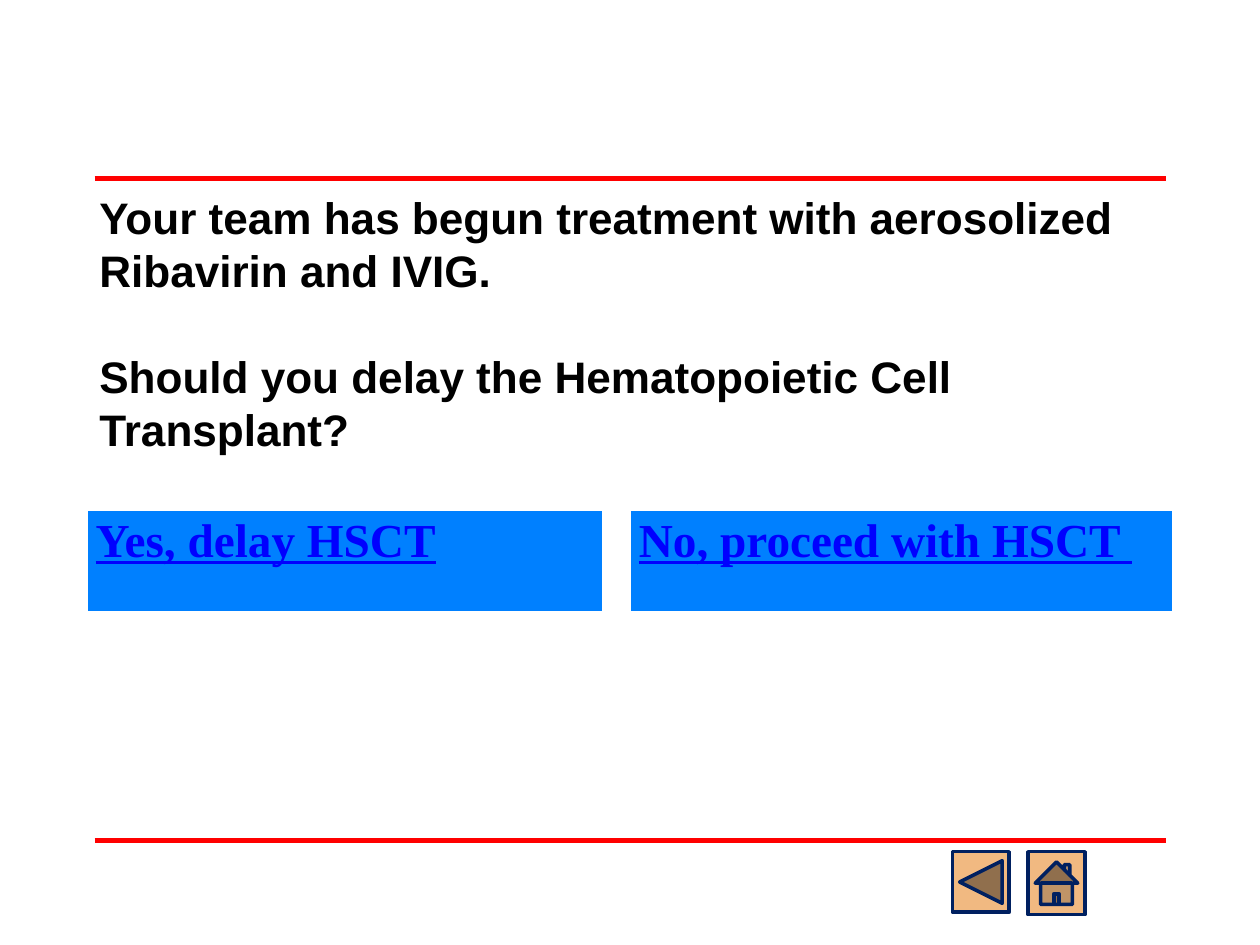
import pptx
import pptx.util
import pptx.dml.color
import pptx.enum.shapes
import pptx.enum.text
import pptx.oxml.ns
from lxml import etree

Pt = pptx.util.Pt
Kind = pptx.enum.shapes.MSO_SHAPE

# Content
lines = ["Your team has begun treatment with aerosolized Ribavirin and IVIG.",
         "Should you delay the Hematopoietic Cell Transplant?"]
picks = [("Yes, delay HSCT", 49.68, 294.5),
         ("No, proceed with HSCT ", 360, 310.3)]
keys = [(Kind.ACTION_BUTTON_FORWARD_OR_NEXT, 544.3, 34.6, 180),
        (Kind.ACTION_BUTTON_HOME, 587.5, 36, 0)]
rules = [102.2, 480.2]

theme = dict(
    ink="000000", rule="FF0000", fill="0080FF", link="0000FF", edge="FFFFFF",
    key="F1B981", rim="002060",
    head="Arial", body="Times New Roman", big=25.2, pick=27, lead=30.3)


def tint(name):
    return pptx.dml.color.RGBColor.from_string(theme[name])


def write(frame, texts, face, size, ink, under=None, lead=None):
    """Fill a text frame, one paragraph for each text."""
    for i, text in enumerate(texts):
        para = frame.add_paragraph() if i else frame.paragraphs[0]
        if lead:
            para.line_spacing = Pt(lead)
            para.space_before = Pt(lead if i else 0)
        run = para.add_run()
        run.text = text
        font = run.font
        font.name, font.size, font.bold = theme[face], Pt(theme[size]), True
        font.underline = under
        font.color.rgb = tint(ink)


def pad(item, side, top):
    item.margin_left = item.margin_right = Pt(side)
    item.margin_top = item.margin_bottom = Pt(top)


def edge(cell):
    """Put white borders on a cell, with a thick one below."""
    props = cell._tc.get_or_add_tcPr()
    for i, (tag, wide) in enumerate([("lnL", 1), ("lnR", 1), ("lnT", 1), ("lnB", 3)]):
        line = etree.Element(pptx.oxml.ns.qn("a:" + tag), w=str(Pt(wide)))
        fill = etree.SubElement(line, pptx.oxml.ns.qn("a:solidFill"))
        etree.SubElement(fill, pptx.oxml.ns.qn("a:srgbClr"), val=theme["edge"])
        props.insert(i, line)


deck = pptx.Presentation()
deck.slide_width, deck.slide_height = Pt(720), Pt(540)
slide = deck.slides.add_slide(deck.slide_layouts[6])
shapes = slide.shapes

# Red rules
for y in rules:
    rule = shapes.add_connector(pptx.enum.shapes.MSO_CONNECTOR.STRAIGHT,
                                Pt(54), Pt(y), Pt(666), Pt(y))
    rule.line.color.rgb = tint("rule")
    rule.line.width = Pt(3)
    etree.SubElement(rule._element.spPr, pptx.oxml.ns.qn("a:effectLst"))

# Question
box = shapes.add_textbox(Pt(49.68), Pt(89.28), Pt(620.64), Pt(234.72))
frame = box.text_frame
frame.word_wrap = True
frame.vertical_anchor = pptx.enum.text.MSO_ANCHOR.TOP
pad(frame, 7.2, 3.6)
frame.margin_top = Pt(19.4)
write(frame, lines, "head", "big", "ink", lead=theme["lead"])

# Answers
for text, x, wide in picks:
    grid = shapes.add_table(1, 1, Pt(x), Pt(291.6), Pt(wide), Pt(59)).table
    cell = grid.cell(0, 0)
    pad(cell, 5.04, 2.88)
    cell.fill.solid()
    cell.fill.fore_color.rgb = tint("fill")
    edge(cell)
    write(cell.text_frame, [text], "body", "pick", "link", under=True)

# Navigation buttons
for kind, x, high, turn in keys:
    key = shapes.add_shape(kind, Pt(x), Pt(486.7), Pt(32.4), Pt(high))
    key.rotation = turn
    key.shadow.inherit = False
    key.fill.solid()
    key.fill.fore_color.rgb = tint("key")
    key.line.color.rgb = tint("rim")
    key.line.width = Pt(2)

deck.save("out.pptx")
